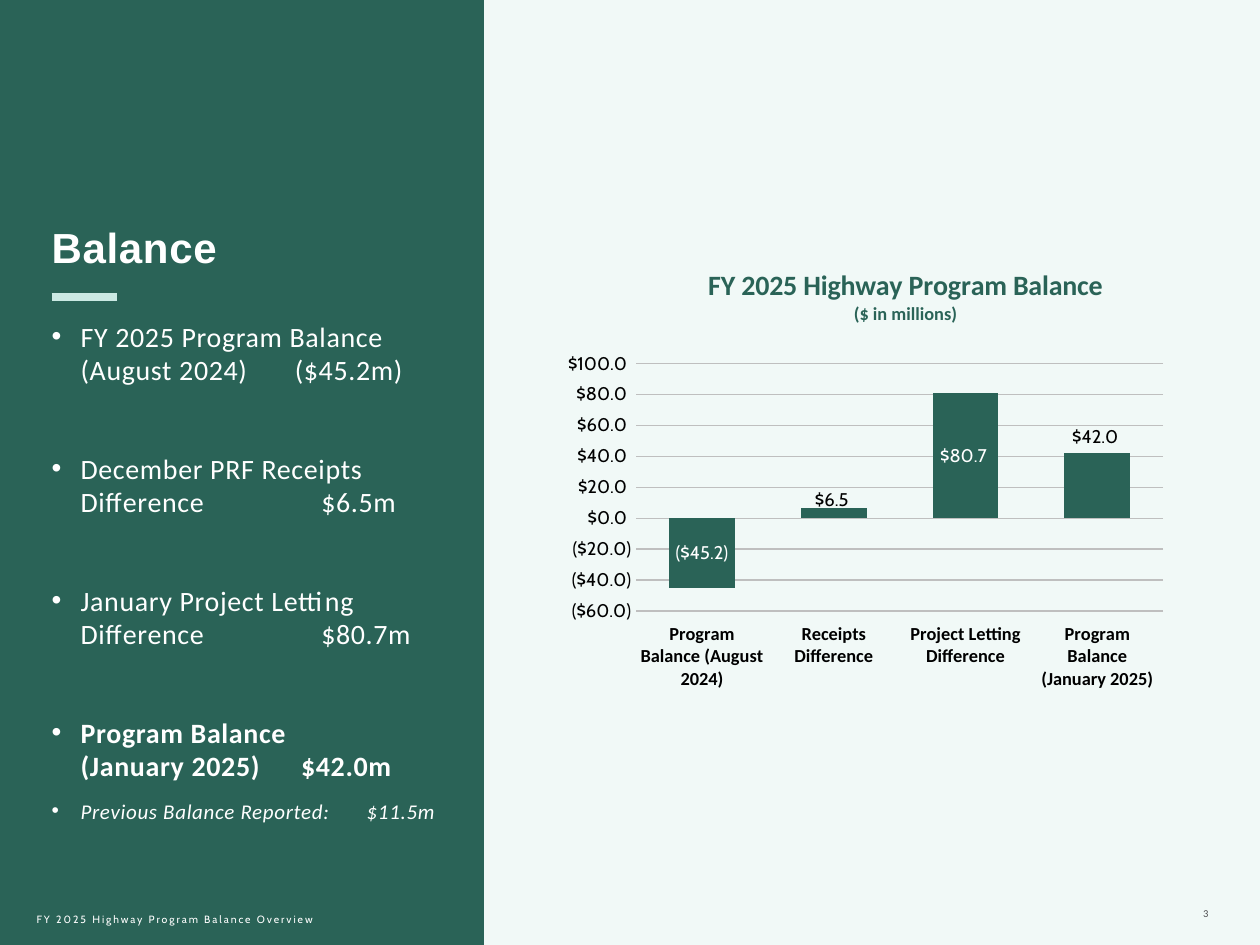
import pptx
import pptx.chart.data
import pptx.dml.color
import pptx.enum.chart
import pptx.enum.shapes
import pptx.enum.text
import pptx.oxml
import pptx.oxml.ns
import pptx.util
from dataclasses import dataclass

Pt = pptx.util.Pt
Rgb = pptx.dml.color.RGBColor.from_string
qn = pptx.oxml.ns.qn
kinds = pptx.enum.chart
anchors = pptx.enum.text.MSO_ANCHOR
aligns = pptx.enum.text.PP_ALIGN


@dataclass
class Theme:
    green = Rgb("2A6357")
    mint = Rgb("CBE9E3")
    pale = Rgb("F1F9F7")
    gray = Rgb("BFBFBF")
    slate = Rgb("4D4D4F")
    white = Rgb("FFFFFF")
    black = Rgb("000000")
    body = "Calibri"
    head = "Arial"
    plain = "Cabin"
    title = 24
    item = 16
    note = 12
    label = 10.5
    small = 6


def run(par, text, face, size, color, bold=False, slant=False, gap=0):
    part = par.add_run()
    part.text = text
    font = part.font
    font.name, font.size, font.color.rgb = face, Pt(size), color
    font.bold, font.italic = bold, slant
    if gap:
        part.font._element.set("spc", str(gap))


def layout(after, **vals):
    host = after.getparent()
    for old in host.findall(qn("c:layout")):
        host.remove(old)
    node = after.makeelement(qn("c:layout"), {})
    hand = node.makeelement(qn("c:manualLayout"), {})
    node.append(hand)
    for name, val in vals.items():
        leaf = hand.makeelement(qn("c:" + name), {"val": str(val)})
        hand.append(leaf)
    after.addnext(node)


theme = Theme()
deck = pptx.Presentation()
deck.slide_width = pptx.util.Inches(10)
deck.slide_height = pptx.util.Inches(7.5)
col = deck.slide_width / 100
row = deck.slide_height / 75
slide = deck.slides.add_slide(deck.slide_layouts[6])
slide.background.fill.solid()
slide.background.fill.fore_color.rgb = theme.pale
shapes = slide.shapes

panel = shapes.add_shape(
    pptx.enum.shapes.MSO_SHAPE.RECTANGLE, 0, 0, int(38.4 * col), deck.slide_height)
panel.shadow.inherit = False
panel.fill.solid()
panel.fill.fore_color.rgb = theme.green
panel.line.fill.background()

frames = []
for x, y, wide, high, anchor in (
    (4.1, 17.6, 31.2, 48.3, anchors.TOP),
    (86.2, 69.5, 9.7, 4, anchors.BOTTOM),
    (2.9, 71.5, 26.1, 3, anchors.MIDDLE),
):
    box = shapes.add_textbox(int(x * col), int(y * row), int(wide * col), int(high * row))
    frame = box.text_frame
    frame.word_wrap = True
    frame.vertical_anchor = anchor
    frame.margin_left = frame.margin_right = 0
    frame.margin_top = frame.margin_bottom = int(row / 2)
    frames.append(frame)
main, page, foot = frames
main.margin_top = main.margin_bottom = 0

par = page.paragraphs[0]
par.alignment = aligns.RIGHT
run(par, "3", theme.body, theme.small, theme.slate, gap=110)
run(foot.paragraphs[0], "FY 2025 Highway Program Balance Overview",
    theme.plain, theme.small, theme.white, gap=110)

par = main.paragraphs[0]
par.space_after = Pt(18)
run(par, "Balance", theme.head, theme.title, theme.white, True, gap=40)

items = (
    (("FY 2025 Program Balance", "(August 2024)"), "($45.2m)", 19.3, 9, theme.item, False, False),
    (("December PRF Receipts", "Difference"), "$6.5m", 21.4, 37, theme.item, False, False),
    (("January Project Letting", "Difference"), "$80.7m", 21.4, 37, theme.item, False, False),
    (("Program Balance", "(January 2025)"), "$42.0m", 19.8, 37, theme.item, True, False),
    (("Previous Balance Reported:",), "$11.5m", 21.9, 9, theme.note, False, True),
)
for lines, sum_, stop, above, size, bold, slant in items:
    par = main.add_paragraph()
    props = par._p.get_or_add_pPr()
    props.set("marL", str(int(2.3 * col)))
    props.set("indent", str(int(-2.3 * col)))
    face = props.makeelement(qn("a:buFont"), {"typeface": theme.head})
    dot = props.makeelement(qn("a:buChar"), {"char": "•"})
    tabs = props.makeelement(qn("a:tabLst"), {})
    tabs.append(tabs.makeelement(qn("a:tab"), {"pos": str(int(stop * col)), "algn": "l"}))
    props.extend((face, dot, tabs))
    par.space_before = Pt(above)
    for num, line in enumerate(lines):
        if num:
            par.add_line_break()
        tail = "\t" + sum_ if num == len(lines) - 1 else ""
        run(par, line + tail, theme.body, size, theme.white, bold, slant, 40)

rule = shapes.add_connector(
    pptx.enum.shapes.MSO_CONNECTOR.STRAIGHT,
    int(4.1 * col), int(23.6 * row), int(9.3 * col), int(23.6 * row))
rule.line.color.rgb = theme.mint
rule.line.width = Pt(4.5)
props = rule._element.spPr
props.append(props.makeelement(qn("a:effectLst"), {}))

money = '"$"#,##0.0_);\\("$"#,##0.0\\)'
data = pptx.chart.data.CategoryChartData(number_format=money)
data.categories = ("Program Balance (August 2024)", "Receipts Difference",
                   "Project Letting Difference", "Program Balance (January 2025)")
data.add_series("Series 1", (-45.2, 6.5, 80.7, 42))
chart = shapes.add_chart(
    kinds.XL_CHART_TYPE.COLUMN_CLUSTERED, int(44.1 * col), int(20.5 * row),
    int(49.2 * col), int(35 * row), data).chart
chart.has_legend = False
chart.font.name, chart.font.size = theme.plain, Pt(10)
chart.font.color.rgb = theme.black

chart.has_title = True
words = chart.chart_title.text_frame
run(words.paragraphs[0], "FY 2025 Highway Program Balance",
    theme.body, theme.item, theme.green, True)
run(words.add_paragraph(), "($ in millions)", theme.body, theme.label, theme.green, True)
layout(chart.chart_title._element.find(qn("c:tx")),
       xMode="edge", yMode="edge", x=0.24, y=0.01)

cats, vals = chart.category_axis, chart.value_axis
for axis, face, bold in ((cats, theme.body, True), (vals, theme.plain, False)):
    axis.major_tick_mark = axis.minor_tick_mark = kinds.XL_TICK_MARK.NONE
    font = axis.tick_labels.font
    font.name, font.size, font.bold = face, Pt(theme.label), bold
    font.color.rgb = theme.black
cats.tick_label_position = kinds.XL_TICK_LABEL_POSITION.LOW
vals.minimum_scale, vals.maximum_scale, vals.major_unit = -60, 100, 20
vals.tick_labels.number_format = money
vals.tick_labels.number_format_is_linked = False
vals.format.line.fill.background()
vals.has_major_gridlines = True
for line in (cats.format.line, vals.major_gridlines.format.line):
    line.color.rgb = theme.gray
    line.width = Pt(0.75)

plot = chart.plots[0]
plot.gap_width, plot.overlap = 100, -24
plot.vary_by_categories = False
bars = plot.series[0]
bars.invert_if_negative = False
bars.format.fill.solid()
bars.format.fill.fore_color.rgb = theme.green
marks = bars.data_labels
marks.show_value = True
marks.number_format, marks.number_format_is_linked = money, False
marks.position = kinds.XL_LABEL_POSITION.CENTER
outer = [bars.points[num].data_label for num in (1, 3)]
for mark, color in ((marks, theme.white), *((each, theme.black) for each in outer)):
    font = mark.font
    font.name, font.size = theme.plain, Pt(theme.label)
    font.color.rgb = color
for mark in outer:
    mark.position = kinds.XL_LABEL_POSITION.OUTSIDE_END
for node in marks._element.findall(qn("c:dLbl")):
    index = node.find(qn("c:idx"))
    index.addnext(node.makeelement(qn("c:numFmt"), {"formatCode": money, "sourceLinked": "0"}))
    if index.get("val") == "1":
        layout(index, x=0, y=0.02)

area = chart._chartSpace.chart.plotArea
mark = area.makeelement(qn("c:layout"), {})
area.insert(0, mark)
layout(mark, layoutTarget="inner", xMode="edge", yMode="edge",
       x=5.6 / 100, y=15.3 / 100, w=91.3 / 100, h=64.8 / 100)

deck.save("out.pptx")
